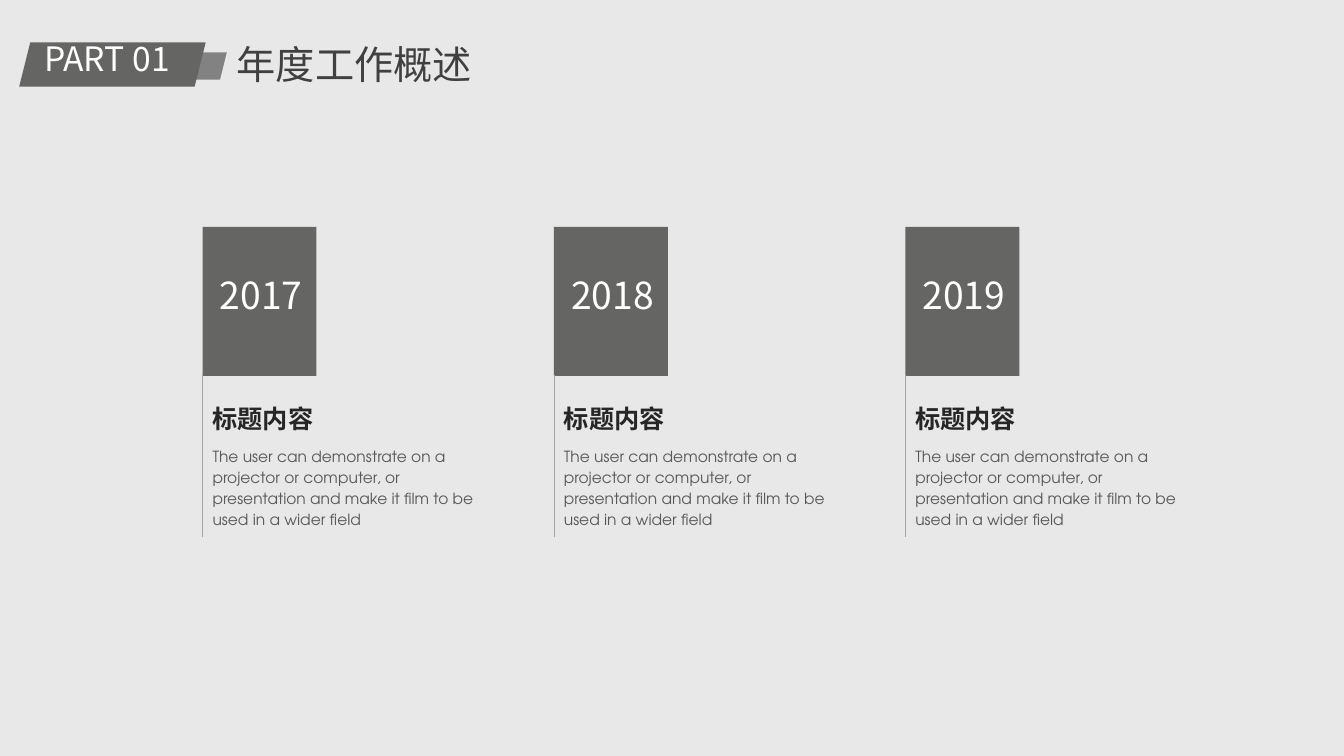
from dataclasses import dataclass

import pptx
import pptx.dml.color
import pptx.enum.shapes
import pptx.enum.text
import pptx.oxml
import pptx.oxml.ns
import pptx.shapes.shapetree
import pptx.util
from pptx.dml.color import RGBColor
from pptx.enum.shapes import MSO_SHAPE
from pptx.enum.text import MSO_ANCHOR, MSO_AUTO_SIZE, PP_ALIGN
from pptx.util import Inches

BACKGROUND = RGBColor(0xE8, 0xE8, 0xE8)
DARK_GREY = RGBColor(0x65, 0x65, 0x64)
MID_GREY = RGBColor(0x82, 0x82, 0x82)
RULE_GREY = RGBColor(0xA6, 0xA6, 0xA6)
TITLE_COLOR = RGBColor(0x40, 0x40, 0x40)
HEADING_COLOR = RGBColor(0x26, 0x26, 0x26)
BODY_COLOR = RGBColor(0x59, 0x59, 0x59)
WHITE = RGBColor(0xFF, 0xFF, 0xFF)

SANS = "Noto Sans CJK SC"
GEOMETRIC = "TeX Gyre Adventor"

YEARS = ("2017", "2018", "2019")
FIRST_COLUMN = 2.01
COLUMN_STEP = 3.485
HEADING = "标题内容"
BODY = (
    "The user can demonstrate on a projector or computer, "
    "or presentation and make it film to be used in a wider field"
)


@dataclass(frozen=True)
class Area:
    left: float
    top: float
    width: float
    height: float

    def lengths(self) -> tuple[int, int, int, int]:
        return (Inches(self.left), Inches(self.top), Inches(self.width), Inches(self.height))


@dataclass(frozen=True)
class TextStyle:
    size: float
    color: RGBColor
    font: str = SANS
    bold: bool = False
    align: PP_ALIGN = PP_ALIGN.LEFT
    anchor: MSO_ANCHOR = MSO_ANCHOR.TOP
    line_spacing: float = 1.0
    grow: bool = True


PART_STYLE = TextStyle(24, WHITE)
TITLE_STYLE = TextStyle(28, TITLE_COLOR)
YEAR_STYLE = TextStyle(26.6, WHITE, align=PP_ALIGN.CENTER, anchor=MSO_ANCHOR.MIDDLE, grow=False)
HEADING_STYLE = TextStyle(18, HEADING_COLOR, bold=True)
BODY_STYLE = TextStyle(11, BODY_COLOR, font=GEOMETRIC, line_spacing=1.14, grow=False)

Shapes = pptx.shapes.shapetree.SlideShapes | pptx.shapes.shapetree.GroupShapes


def add_block(shapes: Shapes, kind: MSO_SHAPE, area: Area, color: RGBColor) -> None:
    block = shapes.add_shape(kind, *area.lengths())
    block.shadow.inherit = False
    block.fill.solid()
    block.fill.fore_color.rgb = color
    block.line.fill.background()


def add_text(shapes: Shapes, area: Area, text: str, style: TextStyle) -> None:
    box = shapes.add_textbox(*area.lengths())
    frame = box.text_frame
    frame.word_wrap = True
    frame.auto_size = MSO_AUTO_SIZE.SHAPE_TO_FIT_TEXT if style.grow else MSO_AUTO_SIZE.NONE
    frame.vertical_anchor = style.anchor
    frame.text = text
    para = frame.paragraphs[0]
    para.alignment = style.align
    para.line_spacing = style.line_spacing
    span = para.runs[0]
    span.font.size = pptx.util.Pt(style.size)
    span.font.bold = style.bold
    span.font.color.rgb = style.color
    span.font.name = style.font
    east_asian = pptx.oxml.parse_xml(
        f'<a:ea {pptx.oxml.ns.nsdecls("a")} typeface="{style.font}"/>'
    )
    span.font._element.find(pptx.oxml.ns.qn("a:latin")).addnext(east_asian)


def add_rule(shapes: Shapes, left: float, top: float, bottom: float) -> None:
    rule = shapes.add_connector(
        pptx.enum.shapes.MSO_CONNECTOR.STRAIGHT,
        Inches(left), Inches(top), Inches(left), Inches(bottom),
    )
    rule.line.color.rgb = RULE_GREY
    rule.line.width = pptx.util.Pt(0.5)
    rule._element.spPr.append(
        pptx.oxml.parse_xml(f'<a:effectLst {pptx.oxml.ns.nsdecls("a")}/>')
    )


def add_header(shapes: Shapes) -> None:
    add_block(shapes, MSO_SHAPE.PARALLELOGRAM, Area(1.71, 0.52, 0.54, 0.27), MID_GREY)
    add_block(shapes, MSO_SHAPE.PARALLELOGRAM, Area(0.19, 0.42, 1.85, 0.44), DARK_GREY)
    add_text(shapes, Area(0.34, 0.33, 1.54, 0.5), "PART 01", PART_STYLE)
    add_text(shapes, Area(2.25, 0.35, 3.82, 0.57), "年度工作概述", TITLE_STYLE)


def add_year_column(shapes: Shapes, left: float, year: str) -> None:
    column = shapes.add_group_shape().shapes
    add_block(column, MSO_SHAPE.RECTANGLE, Area(left, 2.25, 1.13, 1.48), DARK_GREY)
    add_text(column, Area(left - 0.12, 2.43, 1.4, 0.99), year, YEAR_STYLE)
    add_rule(column, left, 3.72, 5.33)
    add_text(column, Area(left, 4.36, 2.8, 1.36), BODY, BODY_STYLE)
    add_text(column, Area(left, 3.95, 1.45, 0.4), HEADING, HEADING_STYLE)


def main() -> None:
    deck = pptx.Presentation()
    deck.slide_width = Inches(13.33)
    deck.slide_height = Inches(7.5)
    page = deck.slides.add_slide(deck.slide_layouts[6])
    page.background.fill.solid()
    page.background.fill.fore_color.rgb = BACKGROUND
    add_header(page.shapes)
    for index, year in enumerate(YEARS):
        add_year_column(page.shapes, FIRST_COLUMN + index * COLUMN_STEP, year)
    deck.save("out.pptx")


if __name__ == "__main__":
    main()
